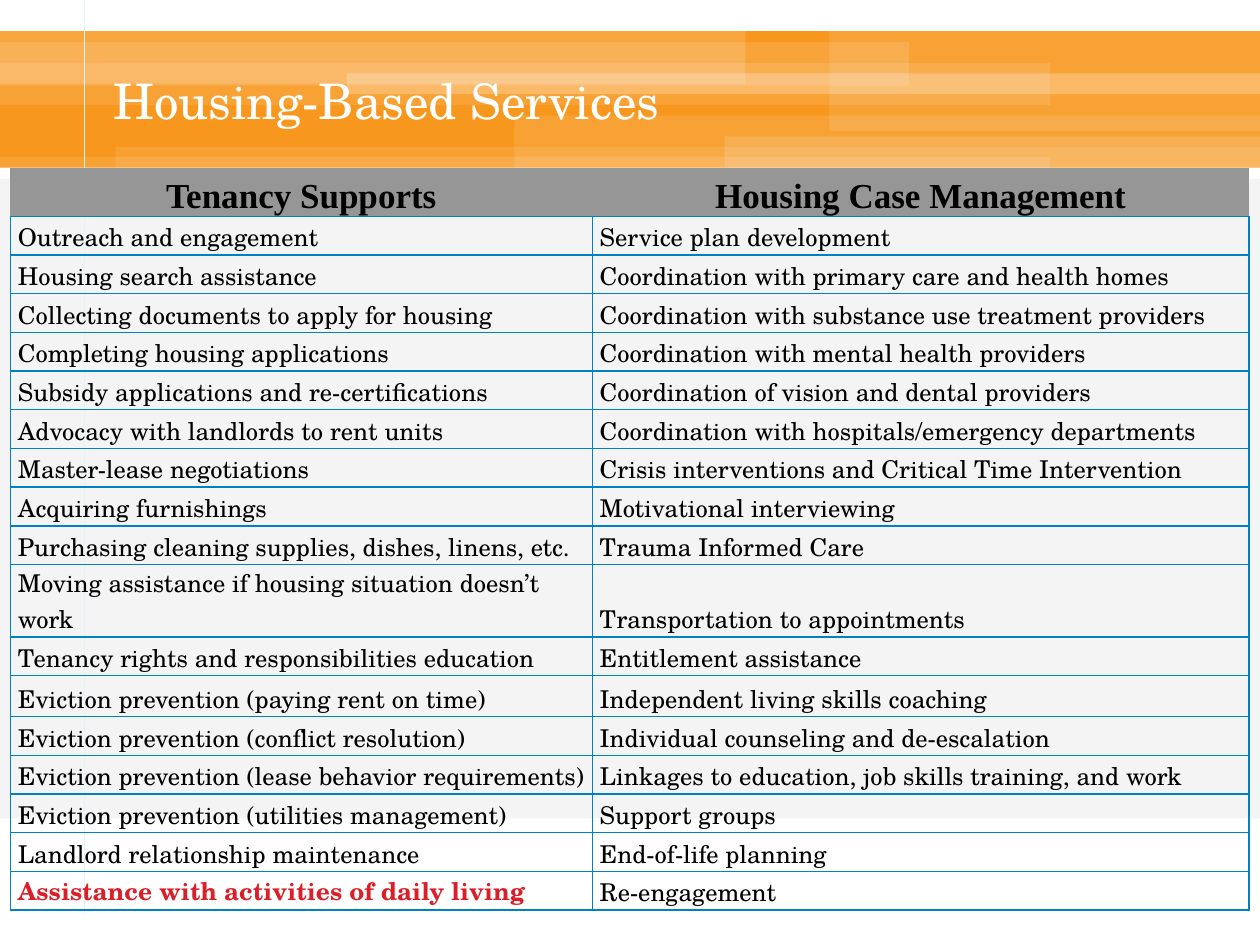
import dataclasses
import typing

import lxml.etree
import pptx
import pptx.dml.color
import pptx.enum.shapes
import pptx.enum.text
import pptx.oxml
import pptx.oxml.ns
import pptx.util

Cm = pptx.util.Cm
Pt = pptx.util.Pt
ALIGN = pptx.enum.text.PP_ALIGN
ANCHOR = pptx.enum.text.MSO_ANCHOR


@dataclasses.dataclass(frozen=True)
class Theme:
    white: str = "FFFFFF"
    black: str = "000000"
    panel: str = "F2F2F2"
    orange: str = "F8971D"
    guide: str = "DEF5FA"
    header: str = "969696"
    border: str = "0081C6"
    accent: str = "DA1F28"
    font: str = "TeX Gyre Schola"
    header_font: str = "Times New Roman"
    title_size: int = 28
    header_size: int = 20
    body_size: int = 14


class Block(typing.NamedTuple):
    """A flat rectangle: place in centimetres, opacity in percent."""
    left: float
    top: float
    width: float
    height: float
    opacity: int
    color: str = "FFFFFF"


THEME = Theme()

BLOCKS = [
    Block(0, 3.6, 25.4, 12.9, 83, THEME.panel),
    Block(0, 0.63, 25.4, 2.75, 100, THEME.orange),
    # Translucent strips over the orange band
    Block(0, 0.85, 18.33, 0.88, 13),
    Block(6.99, 1.48, 18.41, 0.42, 25),
    Block(2.33, 2.96, 23.07, 0.42, 9),
    Block(0, 3.17, 21.17, 0.21, 11),
    Block(0, 1.27, 21.17, 0.85, 11),
    Block(16.72, 0.63, 8.68, 2.01, 11),
    Block(10.37, 2.33, 15.03, 1.06, 11),
    Block(0, 0.63, 15.03, 1.06, 15),
    Block(14.61, 2.75, 10.79, 0.63, 14),
]

HEADERS = ("Tenancy Supports", "Housing Case Management")
SERVICES = [
    ("Outreach and engagement", "Service plan development"),
    ("Housing search assistance", "Coordination with primary care and health homes"),
    ("Collecting documents to apply for housing",
     "Coordination with substance use treatment providers"),
    ("Completing housing applications", "Coordination with mental health providers"),
    ("Subsidy applications and re-certifications",
     "Coordination of vision and dental providers"),
    ("Advocacy with landlords to rent units",
     "Coordination with hospitals/emergency departments"),
    ("Master-lease negotiations", "Crisis interventions and Critical Time Intervention"),
    ("Acquiring furnishings", "Motivational interviewing"),
    ("Purchasing cleaning supplies, dishes, linens, etc.", "Trauma Informed Care"),
    ("Moving assistance if housing situation doesn’t work",
     "Transportation to appointments"),
    ("Tenancy rights and responsibilities education", "Entitlement assistance"),
    ("Eviction prevention (paying rent on time)", "Independent living skills coaching"),
    ("Eviction prevention (conflict resolution)",
     "Individual counseling and de-escalation"),
    ("Eviction prevention (lease behavior requirements)",
     "Linkages to education, job skills training, and work"),
    ("Eviction prevention (utilities management)", "Support groups"),
    ("Landlord relationship maintenance", "End-of-life planning"),
    ("Assistance with activities of daily living", "Re-engagement"),
]
HIGHLIGHT = "Assistance with activities of daily living"
COLUMN_WIDTHS = (11.73, 13.24)
HEADER_HEIGHT, ROW_HEIGHT = 0.97, 0.78
TALL_ROWS = {10: 0.91, 12: 0.83}


def rgb(color: str) -> pptx.dml.color.RGBColor:
    return pptx.dml.color.RGBColor.from_string(color)


def write_text(frame, text: str, *, size: int, color: str = THEME.black,
               font: str = THEME.font, bold: bool = False, align=ALIGN.LEFT):
    """Fill a text frame with one formatted paragraph and return it."""
    para = frame.paragraphs[0]
    para.alignment = align
    span = para.add_run()
    span.text = text
    span.font.size, span.font.name, span.font.bold = Pt(size), font, bold
    span.font.color.rgb = rgb(color)
    return para


def draw_block(page, block: Block) -> None:
    box = page.shapes.add_shape(
        pptx.enum.shapes.MSO_SHAPE.RECTANGLE, Cm(block.left), Cm(block.top),
        Cm(block.width), Cm(block.height))
    box.shadow.inherit = False
    box.line.fill.background()
    box.fill.solid()
    box.fill.fore_color.rgb = rgb(block.color)
    if block.opacity < 100:
        tint = box.element.find(".//" + pptx.oxml.ns.qn("a:srgbClr"))
        lxml.etree.SubElement(tint, pptx.oxml.ns.qn("a:alpha"),
                              val=str(block.opacity * 1000))


def draw_guide(page) -> None:
    line = page.shapes.add_connector(
        pptx.enum.shapes.MSO_CONNECTOR.STRAIGHT, Cm(1.7), 0, Cm(1.7), Cm(18.42))
    line.line.color.rgb = rgb(THEME.guide)
    line.line.width = Pt(0.25)
    lxml.etree.SubElement(line.element.spPr, pptx.oxml.ns.qn("a:effectLst"))


def draw_title(page, text: str) -> None:
    title = page.shapes.title
    title.left, title.top, title.width, title.height = (
        Cm(1.7), Cm(1.27), Cm(20.32), Cm(1.48))
    frame = title.text_frame
    frame.word_wrap = True
    frame.auto_size = pptx.enum.text.MSO_AUTO_SIZE.NONE
    frame.vertical_anchor = ANCHOR.MIDDLE
    para = write_text(frame, text, size=THEME.title_size, color=THEME.white)
    properties = para._p.get_or_add_pPr()
    properties.set("marL", str(Cm(1.27)))
    properties.set("indent", str(Cm(-0.94)))
    # Bring the title in front of the band
    page.shapes._spTree.append(title.element)


def set_borders(cell, sides: str) -> None:
    """Rule the named sides (of L, R, T, B) and clear the others."""
    properties = cell._tc.get_or_add_tcPr()
    for index, side in enumerate("LRTB"):
        fill = (f'<a:solidFill><a:srgbClr val="{THEME.border}"/></a:solidFill>'
                if side in sides else "<a:noFill/>")
        properties.insert(index, pptx.oxml.parse_xml(
            f'<a:ln{side} {pptx.oxml.ns.nsdecls("a")} w="{Pt(1)}">{fill}</a:ln{side}>'))


def draw_cell(cell, text: str, is_header: bool) -> None:
    cell.vertical_anchor = ANCHOR.BOTTOM
    cell.margin_left = cell.margin_right = Cm(0.15)
    cell.margin_top = cell.margin_bottom = 0
    if is_header:
        cell.fill.solid()
        cell.fill.fore_color.rgb = rgb(THEME.header)
        write_text(cell.text_frame, text, size=THEME.header_size,
                   font=THEME.header_font, bold=True, align=ALIGN.CENTER)
    else:
        cell.fill.background()
        marked = text == HIGHLIGHT
        write_text(cell.text_frame, text, size=THEME.body_size, bold=marked,
                   color=THEME.accent if marked else THEME.black)
    set_borders(cell, "B" if is_header else "LRTB")


def draw_table(page) -> None:
    rows = [HEADERS, *SERVICES]
    heights = [HEADER_HEIGHT] + [TALL_ROWS.get(index, ROW_HEIGHT)
                                 for index in range(1, len(rows))]
    table = page.shapes.add_table(
        len(rows), len(HEADERS), Cm(0.21), Cm(3.39),
        Cm(sum(COLUMN_WIDTHS)), Cm(sum(heights))).table
    table.first_row = table.horz_banding = False
    for column, width in zip(table.columns, COLUMN_WIDTHS):
        column.width = Cm(width)
    for row_index, (texts, height) in enumerate(zip(rows, heights)):
        table.rows[row_index].height = Cm(height)
        for column_index, text in enumerate(texts):
            draw_cell(table.cell(row_index, column_index), text, row_index == 0)


def main() -> None:
    deck = pptx.Presentation()
    deck.slide_width, deck.slide_height = Cm(25.4), Cm(19.05)
    page = deck.slides.add_slide(deck.slide_layouts[5])
    # Background band and guide line
    for block in BLOCKS:
        draw_block(page, block)
    draw_guide(page)
    # Content
    draw_title(page, "Housing-Based Services")
    draw_table(page)
    deck.save("out.pptx")


if __name__ == "__main__":
    main()
